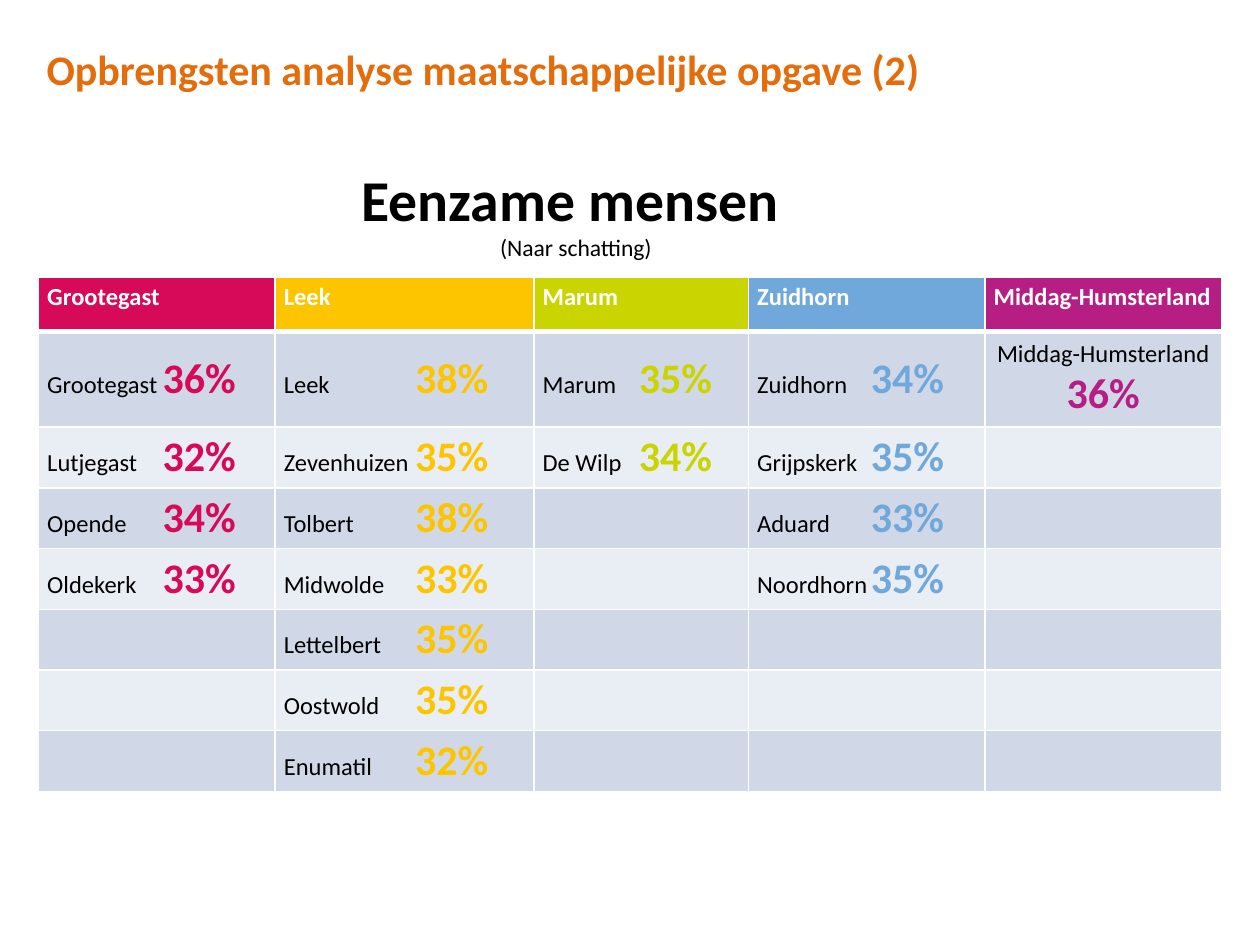
from dataclasses import dataclass

from lxml import etree
from pptx import Presentation
from pptx.dml.color import RGBColor
from pptx.enum.text import MSO_ANCHOR, PP_ALIGN
from pptx.oxml.ns import qn
from pptx.util import Pt

LEFT, CENTER = PP_ALIGN.LEFT, PP_ALIGN.CENTER
TOP, MIDDLE = MSO_ANCHOR.TOP, MSO_ANCHOR.MIDDLE
TITLE_ONLY = 5


@dataclass(frozen=True)
class Theme:
    font: str = "Calibri"
    title: str = "E46C0A"
    text: str = "000000"
    light: str = "FFFFFF"
    bands: tuple[str, str] = ("D0D8E8", "E9EDF4")
    title_size: float = 24
    heading_size: float = 33
    note_size: float = 13.5
    body_size: float = 14
    value_size: float = 24


@dataclass(frozen=True)
class Municipality:
    name: str
    color: str
    width: float
    villages: tuple[tuple[str, int], ...]
    tab: float | None  # where the percentages start; None centres the text


THEME = Theme()
MUNICIPALITIES = (
    Municipality("Grootegast", "D70A59", 135.2, (
        ("Grootegast", 36), ("Lutjegast", 32), ("Opende", 34), ("Oldekerk", 33)), 66),
    Municipality("Leek", "FDC500", 147.9, (
        ("Leek", 38), ("Zevenhuizen", 35), ("Tolbert", 38), ("Midwolde", 33),
        ("Lettelbert", 35), ("Oostwold", 35), ("Enumatil", 32)), 75),
    Municipality("Marum", "CAD401", 122.6, (("Marum", 35), ("De Wilp", 34)), 55),
    Municipality("Zuidhorn", "70A8DB", 135.2, (
        ("Zuidhorn", 34), ("Grijpskerk", 35), ("Aduard", 33), ("Noordhorn", 35)), 65),
    Municipality("Middag-Humsterland", "B61E83", 135.2, (("Middag-Humsterland", 36),), None),
)
HEADER_HEIGHT, FIRST_HEIGHT, ROW_HEIGHT = 30.7, 54.7, 34.7


def style(font, size: float, color: str, bold: bool = False) -> None:
    font.name, font.size, font.bold = THEME.font, Pt(size), bold
    font.color.rgb = RGBColor.from_string(color)


def add_borders(cell, top: float, bottom: float) -> None:
    """Draw white cell edges; this must come before the fill."""
    properties = cell._tc.get_or_add_tcPr()
    for tag, width in (("a:lnL", 1), ("a:lnR", 1), ("a:lnT", top), ("a:lnB", bottom)):
        line = etree.SubElement(properties, qn(tag), w=str(Pt(width)))
        fill = etree.SubElement(line, qn("a:solidFill"))
        etree.SubElement(fill, qn("a:srgbClr"), val=THEME.light)


def format_cell(cell, color: str, anchor, top: float = 1, bottom: float = 1) -> None:
    add_borders(cell, top, bottom)
    cell.fill.solid()
    cell.fill.fore_color.rgb = RGBColor.from_string(color)
    cell.vertical_anchor = anchor
    cell.margin_left = cell.margin_right = Pt(5)
    cell.margin_top = cell.margin_bottom = Pt(2.7)


def write_village(para, village: str, percent: int, municipality: Municipality) -> None:
    if municipality.tab is None:
        para.alignment = CENTER
        separator = " "
    else:
        tabs = etree.SubElement(para._p.get_or_add_pPr(), qn("a:tabLst"))
        etree.SubElement(tabs, qn("a:tab"), pos=str(Pt(municipality.tab)), algn="l")
        separator = "\t"
    label, value = para.add_run(), para.add_run()
    label.text, value.text = village + separator, f"{percent}%"
    style(label.font, THEME.body_size, THEME.text)
    style(value.font, THEME.value_size, municipality.color, bold=True)


def add_title(page) -> None:
    title = page.shapes.title
    title.left, title.top, title.width, title.height = Pt(19.4), Pt(21), Pt(522), Pt(36)
    frame = title.text_frame
    frame.text = "Opbrengsten analyse maatschappelijke opgave (2)"
    frame.vertical_anchor = TOP
    para = frame.paragraphs[0]
    para.alignment = LEFT
    style(para.font, THEME.title_size, THEME.title, bold=True)


def add_heading(page) -> None:
    box = page.shapes.add_textbox(Pt(199.4), Pt(90), Pt(259.4), Pt(63.4))
    frame = box.text_frame
    frame.word_wrap = True
    heading = frame.paragraphs[0]
    heading.text = "Eenzame mensen"
    style(heading.font, THEME.heading_size, THEME.text, bold=True)
    note = frame.add_paragraph()
    note.text = "(Naar schatting)"
    note.alignment = CENTER
    style(note.font, THEME.note_size, THEME.text)


def add_loneliness_table(page) -> None:
    village_rows = max(len(item.villages) for item in MUNICIPALITIES)
    heights = [HEADER_HEIGHT, FIRST_HEIGHT] + [ROW_HEIGHT] * (village_rows - 1)
    total_width = sum(item.width for item in MUNICIPALITIES)
    table = page.shapes.add_table(
        len(heights), len(MUNICIPALITIES), Pt(22), Pt(158.7), Pt(total_width), Pt(sum(heights))
    ).table
    for row, height in zip(table.rows, heights):
        row.height = Pt(height)
    for column, item in enumerate(MUNICIPALITIES):
        table.columns[column].width = Pt(item.width)
        header = table.cell(0, column)
        format_cell(header, item.color, TOP, bottom=3)
        para = header.text_frame.paragraphs[0]
        para.text = item.name
        style(para.font, THEME.body_size, THEME.light, bold=True)
        for index in range(village_rows):
            cell = table.cell(index + 1, column)
            format_cell(cell, THEME.bands[index % 2], MIDDLE, top=1 if index else 3)
            para = cell.text_frame.paragraphs[0]
            if index < len(item.villages):
                write_village(para, *item.villages[index], item)
            else:
                style(para.font, THEME.body_size, THEME.text)


def main() -> None:
    deck = Presentation()
    deck.slide_width, deck.slide_height = Pt(720), Pt(540)
    page = deck.slides.add_slide(deck.slide_layouts[TITLE_ONLY])
    add_loneliness_table(page)
    add_heading(page)
    add_title(page)
    deck.save("out.pptx")


if __name__ == "__main__":
    main()
